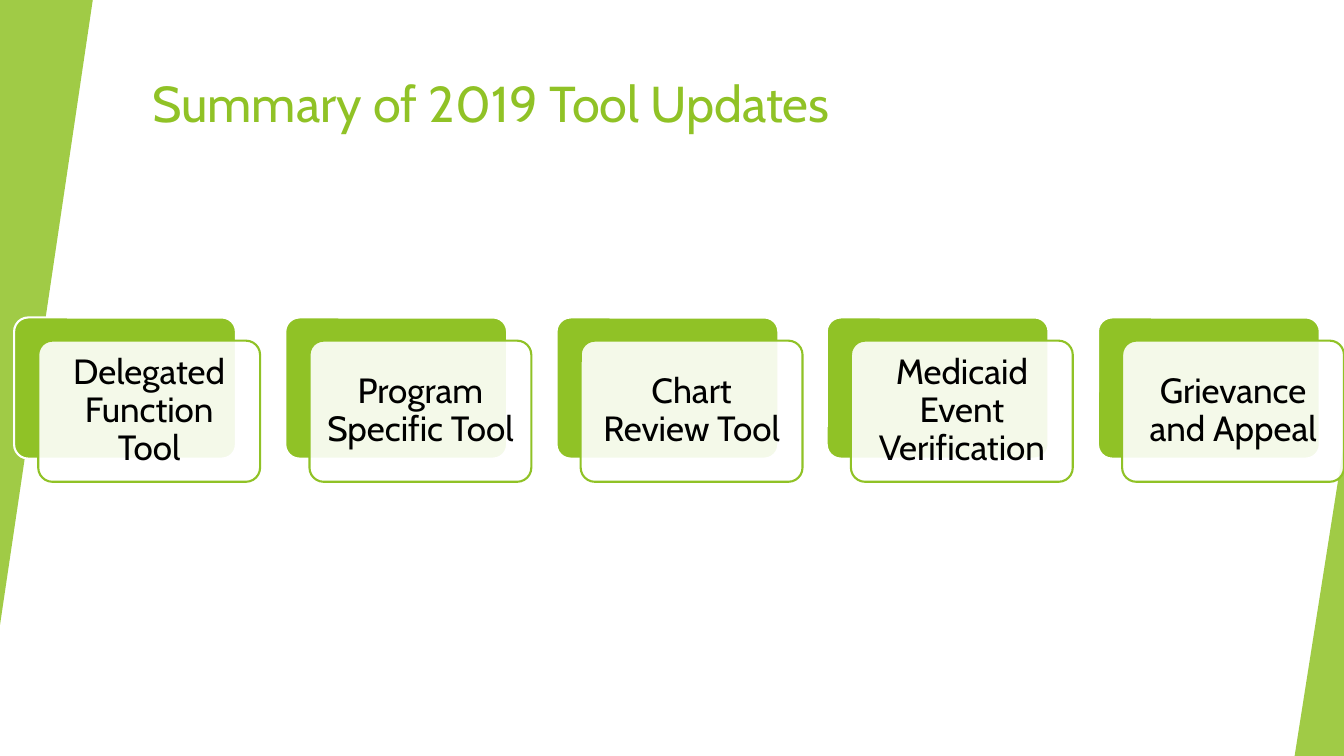
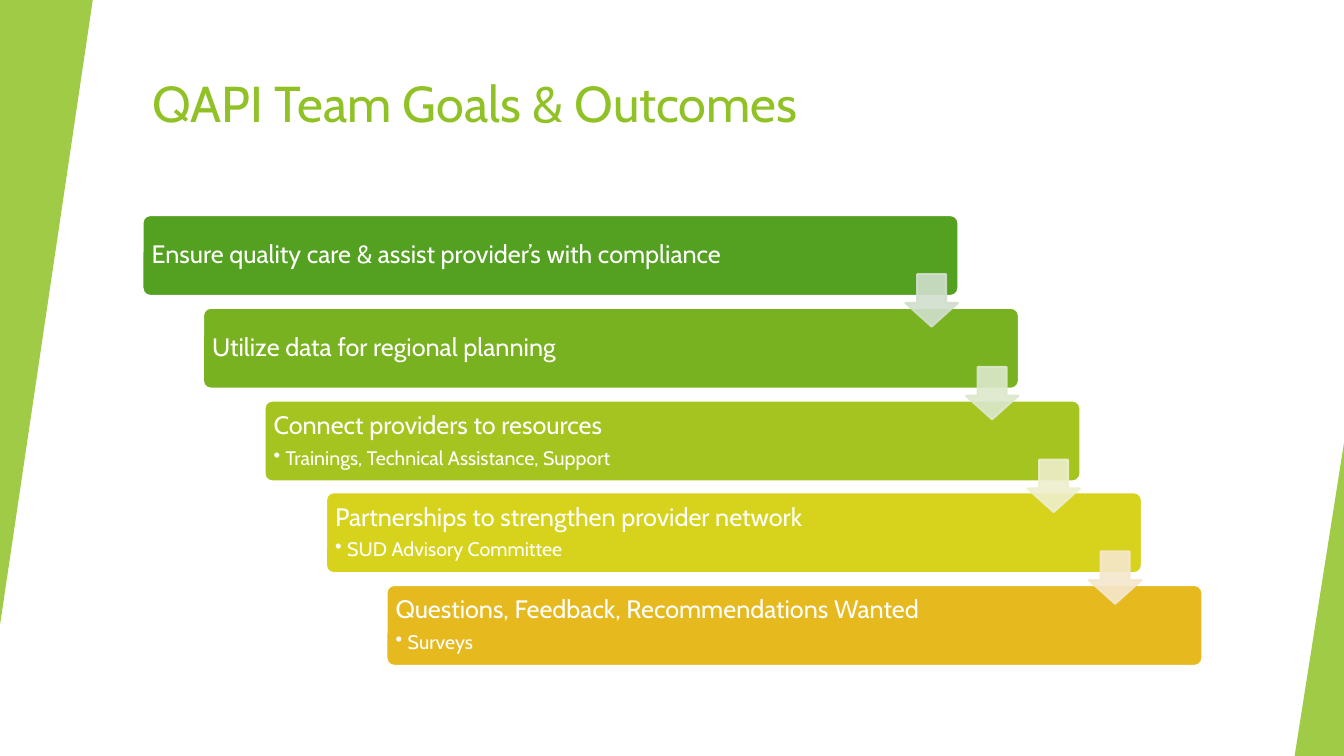
"""Build two green-banded slides: the tool updates and the team goals."""
from dataclasses import dataclass
from typing import Optional

from lxml import etree
from pptx import Presentation
from pptx import util as u
from pptx.dml.color import RGBColor
from pptx.enum import shapes, text
from pptx.oxml.ns import qn

EMU_PER_PX = 9144
FONT = "Cabin"
GREEN = RGBColor(0x90, 0xC2, 0x26)
WHITE = RGBColor(0xFF, 0xFF, 0xFF)
BLACK = RGBColor(0x00, 0x00, 0x00)
FOREST = RGBColor(0x54, 0xA0, 0x21)
LEAF = RGBColor(0x79, 0xB2, 0x20)
LIME = RGBColor(0xA5, 0xC4, 0x1F)
YELLOW = RGBColor(0xD7, 0xD3, 0x1D)
AMBER = RGBColor(0xE6, 0xB9, 0x1E)
PALE_FOREST = RGBColor(0xD1, 0xDF, 0xCD)
PALE_LEAF = RGBColor(0xDC, 0xE8, 0xCC)
PALE_LIME = RGBColor(0xEE, 0xEF, 0xCC)
PALE_AMBER = RGBColor(0xF5, 0xE7, 0xCD)


@dataclass(frozen=True)
class Box:
    """A rectangle in px, 100 px to the inch."""
    left: int
    top: int
    width: int
    height: int

    def emu(self) -> tuple:
        """Return the four lengths in EMU."""
        return tuple(px(n) for n in (self.left, self.top, self.width, self.height))


@dataclass(frozen=True)
class Look:
    """Fill and outline of a shape, with opacity in percent."""
    fill: RGBColor
    line: Optional[RGBColor] = None
    weight: float = 1.5
    fill_opacity: int = 100
    line_opacity: int = 100


@dataclass(frozen=True)
class Goal:
    """One step of the staircase and the arrow that leaves it."""
    heading: str
    color: RGBColor
    detail: str = ""
    arrow: Optional[RGBColor] = None


SLIDE = Box(0, 0, 1333, 750)
TITLE = Box(141, 67, 1115, 120)
LEFT_BAND = Box(0, 0, 92, 620)
RIGHT_BAND = Box(1284, 439, 49, 311)
BAND_LOOK = Look(GREEN, fill_opacity=85)
CARD_BACK = Look(GREEN, WHITE)
CARD_FRONT = Look(WHITE, GREEN, fill_opacity=90)
TOOLS = (
    "Delegated Function Tool",
    "Program Specific Tool",
    "Chart Review Tool",
    "Medicaid Event Verification",
    "Grievance and Appeal",
)
GOALS = (
    Goal("Ensure quality care & assist provider’s with compliance", FOREST, arrow=PALE_FOREST),
    Goal("Utilize data for regional planning", LEAF, arrow=PALE_LEAF),
    Goal("Connect providers to resources", LIME, "Trainings, Technical Assistance, Support", PALE_LIME),
    Goal("Partnerships to strengthen provider network", YELLOW, "SUD Advisory Committee", PALE_AMBER),
    Goal("Questions, Feedback, Recommendations Wanted", AMBER, "Surveys"),
)


def px(length: int) -> int:
    """Turn px into EMU."""
    return u.Emu(length * EMU_PER_PX)


def set_opacity(parent, percent: int) -> None:
    """Make the solid fill directly inside an element see-through."""
    if percent < 100:
        color = parent.find(qn("a:solidFill")).find(qn("a:srgbClr"))
        etree.SubElement(color, qn("a:alpha")).set("val", str(percent * 1000))


def add_preset(slide, preset, box: Box, look: Look, adjustments: tuple):
    """Draw a preset shape without a shadow."""
    shape = slide.shapes.add_shape(preset, *box.emu())
    shape.shadow.inherit = False
    for index, value in enumerate(adjustments):
        shape.adjustments[index] = value
    shape.fill.solid()
    shape.fill.fore_color.rgb = look.fill
    properties = shape._element.spPr
    set_opacity(properties, look.fill_opacity)
    if look.line is None:
        shape.line.fill.background()
    else:
        shape.line.color.rgb = look.line
        shape.line.width = u.Pt(look.weight)
        set_opacity(properties.find(qn("a:ln")), look.line_opacity)
    return shape


def style_frame(frame, inset: int) -> None:
    """Wrap the text, centre it vertically and set equal margins."""
    frame.word_wrap = True
    frame.vertical_anchor = text.MSO_ANCHOR.MIDDLE
    frame.margin_left = frame.margin_right = px(inset)
    frame.margin_top = frame.margin_bottom = px(inset)


def style_paragraph(paragraph, size: int, color: RGBColor, align, after: int = 0) -> None:
    """Format a paragraph and its runs."""
    paragraph.alignment = align
    paragraph.line_spacing = 0.9
    paragraph.space_after = u.Pt(after)
    for run in paragraph.runs:
        run.font.name = FONT
        run.font.size = u.Pt(size)
        run.font.color.rgb = color


def add_bullet(paragraph, indent: int) -> None:
    """Give a paragraph a hanging bullet."""
    properties = paragraph._p.get_or_add_pPr()
    properties.set("marL", str(px(indent)))
    properties.set("indent", str(-px(indent)))
    etree.SubElement(properties, qn("a:buChar")).set("char", "•")


def style_layout(layout) -> None:
    """Place the title once for all slides."""
    title = layout.placeholders[0]
    title.left, title.top, title.width, title.height = TITLE.emu()
    title.text_frame.vertical_anchor = text.MSO_ANCHOR.TOP


def add_banded_slide(deck, layout, heading: str):
    """Add a slide with its side bands and title."""
    slide = deck.slides.add_slide(layout)
    for box, rotation in ((LEFT_BAND, 180), (RIGHT_BAND, 0)):
        band = add_preset(slide, shapes.MSO_SHAPE.ISOSCELES_TRIANGLE, box, BAND_LOOK, (1,))
        band.rotation = rotation
    frame = slide.shapes.title.text_frame
    frame.text = heading
    frame.auto_size = text.MSO_AUTO_SIZE.NONE
    style_paragraph(frame.paragraphs[0], 36, GREEN, text.PP_ALIGN.LEFT)
    frame.paragraphs[0].line_spacing = 1.0
    return slide


def add_tool_card(slide, index: int, tool: str) -> None:
    """Draw a green card with a labelled card in front."""
    left = 14 + round(index * 1075 / 4)
    rounded = shapes.MSO_SHAPE.ROUNDED_RECTANGLE
    add_preset(slide, rounded, Box(left, 315, 220, 140), CARD_BACK, (0.1,))
    front = add_preset(slide, rounded, Box(left + 24, 338, 220, 140), CARD_FRONT, (0.1,))
    style_frame(front.text_frame, 11)
    front.text_frame.text = tool
    style_paragraph(front.text_frame.paragraphs[0], 25, BLACK, text.PP_ALIGN.CENTER)


def goal_corner(index: int) -> tuple:
    """Return the left and top of a step in px."""
    return 141 + round(index * 60.5), 213 + round(index * 91.75)


def add_goal(slide, index: int, goal: Goal) -> None:
    """Draw one step with its heading and optional detail."""
    box = Box(*goal_corner(index), 810, 81)
    step = add_preset(slide, shapes.MSO_SHAPE.ROUNDED_RECTANGLE, box, Look(goal.color, WHITE, 2), (0.1,))
    frame = step.text_frame
    style_frame(frame, 7)
    frame.text = goal.heading
    style_paragraph(frame.paragraphs[0], 18, WHITE, text.PP_ALIGN.LEFT, 6 if goal.detail else 0)
    if goal.detail:
        detail = frame.add_paragraph()
        detail.text = goal.detail
        detail.level = 1
        style_paragraph(detail, 14, WHITE, text.PP_ALIGN.LEFT)
        add_bullet(detail, 12)


def add_goal_arrow(slide, index: int, color: RGBColor) -> None:
    """Draw the arrow from one step to the next."""
    left, top = goal_corner(index)
    look = Look(color, color, fill_opacity=90, line_opacity=90)
    add_preset(slide, shapes.MSO_SHAPE.DOWN_ARROW, Box(left + 757, top + 59, 52, 52), look, (0.55, 0.45))


def main() -> None:
    """Build and save the deck."""
    deck = Presentation()
    deck.slide_width, deck.slide_height = px(SLIDE.width), px(SLIDE.height)
    layout = deck.slide_layouts[5]
    style_layout(layout)

    updates = add_banded_slide(deck, layout, "Summary of 2019 Tool Updates")
    for index, tool in enumerate(TOOLS):
        add_tool_card(updates, index, tool)

    outcomes = add_banded_slide(deck, layout, "QAPI Team Goals & Outcomes")
    for index, goal in enumerate(GOALS):
        add_goal(outcomes, index, goal)
    for index, goal in enumerate(GOALS):
        if goal.arrow is not None:
            add_goal_arrow(outcomes, index, goal.arrow)

    deck.save("out.pptx")


if __name__ == "__main__":
    main()
